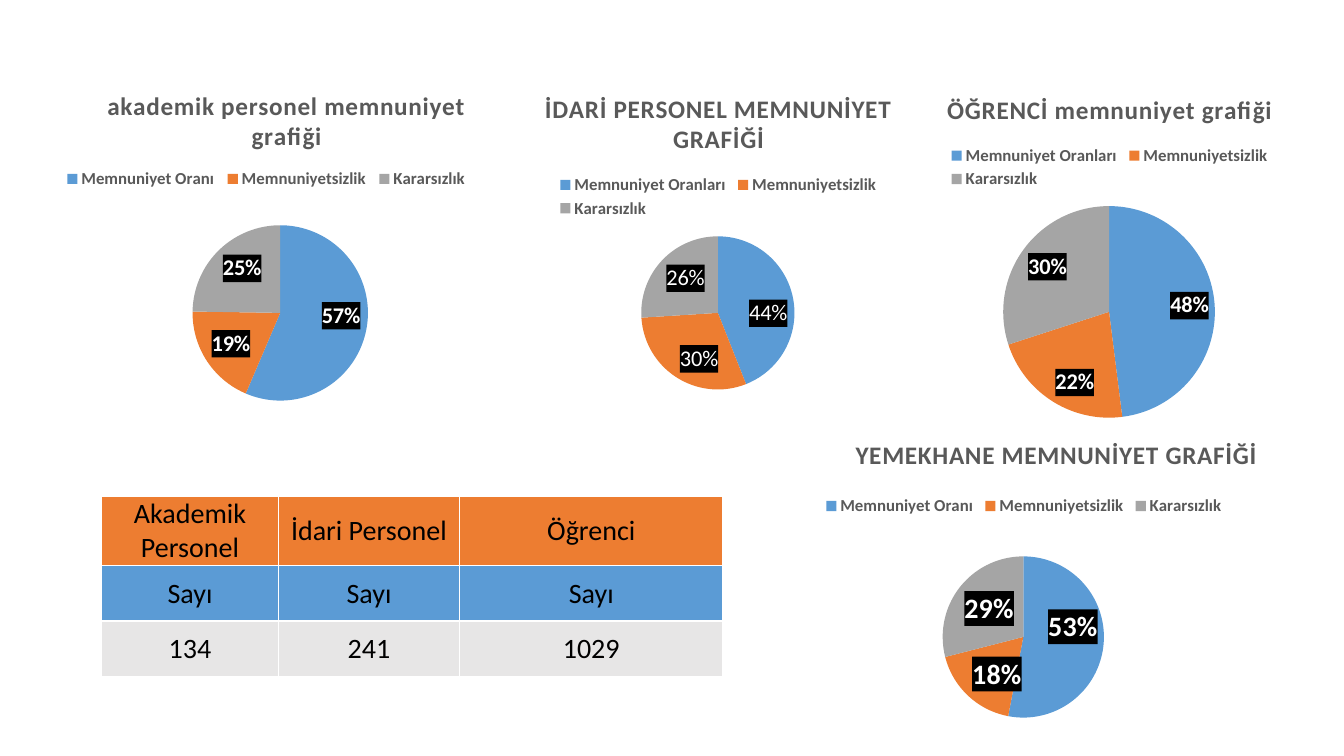
from lxml.etree import SubElement
from pptx import Presentation
from pptx.chart.data import CategoryChartData
from pptx.dml.color import RGBColor
from pptx.enum.chart import XL_CHART_TYPE, XL_LABEL_POSITION, XL_LEGEND_POSITION
from pptx.enum.text import MSO_ANCHOR, PP_ALIGN
from pptx.oxml.ns import qn
from pptx.util import Inches, Pt

FONT = "Calibri"
BLUE = RGBColor(0x5B, 0x9B, 0xD5)
ORANGE = RGBColor(0xED, 0x7D, 0x31)
GRAY = RGBColor(0xA5, 0xA5, 0xA5)
PALE = RGBColor(0xE7, 0xE6, 0xE6)
DARK = RGBColor(0x59, 0x59, 0x59)
BLACK = RGBColor(0, 0, 0)
WHITE = RGBColor(0xFF, 0xFF, 0xFF)

CELL = 0.1  # side of a grid cell in inches


def grid(*cells):
    return [Inches(CELL * count) for count in cells]


def style_font(font, size, color, bold=False):
    font.name, font.size, font.bold = FONT, Pt(size), bold
    font.color.rgb = color


def place(part, frame, left, top, width=None, height=None, after=None):
    """Fix a chart part at a grid position inside the chart's frame."""
    for old in part.findall(qn("c:layout")):
        part.remove(old)
    layout = part.makeelement(qn("c:layout"))
    if after:
        part.find(qn(after)).addnext(layout)
    else:
        part.insert(0, layout)
    manual = SubElement(layout, qn("c:manualLayout"))
    settings = {}
    if after is None:
        settings["layoutTarget"] = "inner"
    settings.update(xMode="edge", yMode="edge",
                    x=(left - frame[0]) / frame[2],
                    y=(top - frame[1]) / frame[3])
    if width:
        settings.update(w=width / frame[2], h=height / frame[3])
    for tag, value in settings.items():
        SubElement(manual, qn(f"c:{tag}")).set("val", str(value))


class SurveySlide:
    """Draws on one blank slide, with lengths in grid columns and rows."""

    def __init__(self, deck):
        self.slide = deck.slides.add_slide(deck.slide_layouts[6])

    def pie(self, frame, title, title_at, legend_at, center, radius,
            first_answer, shares, label_size=16, label_bold=True):
        data = CategoryChartData()
        data.categories = [first_answer, "Memnuniyetsizlik", "Kararsızlık"]
        data.add_series("Series 1", shares)
        chart = self.slide.shapes.add_chart(
            XL_CHART_TYPE.PIE, *grid(*frame), data).chart
        style_font(chart.font, 10, BLACK)

        heading = chart.chart_title.text_frame.paragraphs[0]
        heading.text = title
        style_font(heading.font, 18, DARK, True)
        heading._p.find(".//" + qn("a:defRPr")).set("spc", "50")
        chart.has_legend = True
        chart.legend.position = XL_LEGEND_POSITION.TOP
        chart.legend.include_in_layout = False
        style_font(chart.legend.font, 12, DARK, True)

        plot = chart.plots[0]
        plot.vary_by_categories = True
        series = plot.series[0]
        for index, color in enumerate((BLUE, ORANGE, GRAY)):
            wedge = series.points[index].format
            wedge.fill.solid()
            wedge.fill.fore_color.rgb = color
            wedge.line.fill.background()
        self.label_wedges(series.data_labels, sum(shares) == 100,
                          label_size, label_bold)

        def part(tag):
            return chart._chartSpace.find(".//" + qn(tag))

        place(part("c:title"), frame, *title_at, after="c:tx")
        place(part("c:legend"), frame, *legend_at, after="c:legendPos")
        place(part("c:plotArea"), frame, center[0] - radius,
              center[1] - radius, 2 * radius, 2 * radius)

    def label_wedges(self, labels, complete, size, bold):
        """Show percentages; rounded shares not totalling 100 stay as given."""
        labels.show_percentage = complete
        labels.show_value = not complete
        labels.number_format = "0%" if complete else '0"%"'
        labels.number_format_is_linked = False
        labels.position = XL_LABEL_POSITION.INSIDE_END
        style_font(labels.font, size, WHITE, bold)
        text_style = labels._element.find(qn("c:txPr"))
        box = text_style.makeelement(qn("c:spPr"))
        text_style.addprevious(box)
        fill = SubElement(box, qn("a:solidFill"))
        SubElement(fill, qn("a:srgbClr")).set("val", str(BLACK))

    def table(self, frame, widths, heights, rows, fills):
        table = self.slide.shapes.add_table(
            len(rows), len(widths), *grid(*frame)).table
        table.first_row = table.horz_banding = False
        for column, width in zip(table.columns, grid(*widths)):
            column.width = width
        for row, height, texts, fill in zip(
                table.rows, grid(*heights), rows, fills):
            row.height = height
            for cell, text in zip(row.cells, texts):
                cell.fill.solid()
                cell.fill.fore_color.rgb = fill
                cell.margin_left = cell.margin_right = Inches(0.01)
                cell.margin_top, cell.margin_bottom = Inches(0.01), 0
                cell.vertical_anchor = MSO_ANCHOR.MIDDLE
                paragraph = cell.text_frame.paragraphs[0]
                paragraph.text = text
                paragraph.alignment = PP_ALIGN.CENTER
                style_font(paragraph.font, 20, BLACK)


def main():
    deck = Presentation()
    deck.slide_width, deck.slide_height = Inches(13.33), Inches(7.5)
    survey = SurveySlide(deck)
    survey.pie((2.3, 7.4, 48.2, 33.7), "akademik personel memnuniyet grafiği",
               (10.2, 8.3), (5.9, 16.4, 41, 2.7), (27.8, 31.05), 8.7,
               "Memnuniyet Oranı", (57, 19, 25))
    survey.pie((46.9, 7.4, 48.7, 33.7), "İDARİ PERSONEL MEMNUNİYET GRAFİĞİ",
               (53.6, 8.6), (54.9, 17, 32.7, 5), (71.2, 31.05), 7.6,
               "Memnuniyet Oranları", (44, 30, 26), label_bold=False)
    survey.pie((86.7, 7.4, 46.7, 35.5), "ÖĞRENCİ memnuniyet grafiği",
               (93.5, 8.7), (93.7, 14.1, 32.7, 5), (110, 30.95), 10.5,
               "Memnuniyet Oranları", (48, 22, 30))
    survey.table((10.1, 49.2, 61.5, 17.4), (17.5, 18, 26.1), (6.4, 5.5, 5.5),
                 (("Akademik Personel", "İdari Personel", "Öğrenci"),
                  ("Sayı",) * 3,
                  ("134", "241", "1029")),
                 (ORANGE, BLUE, PALE))
    survey.pie((71.6, 42.9, 59.8, 30), "YEMEKHANE MEMNUNİYET GRAFİĞİ",
               (84.4, 42.9), (81.3, 48.9, 40.5, 2.6), (101.5, 63.2), 8,
               "Memnuniyet Oranı", (53, 18, 29), label_size=20)
    deck.save("out.pptx")


if __name__ == "__main__":
    main()
